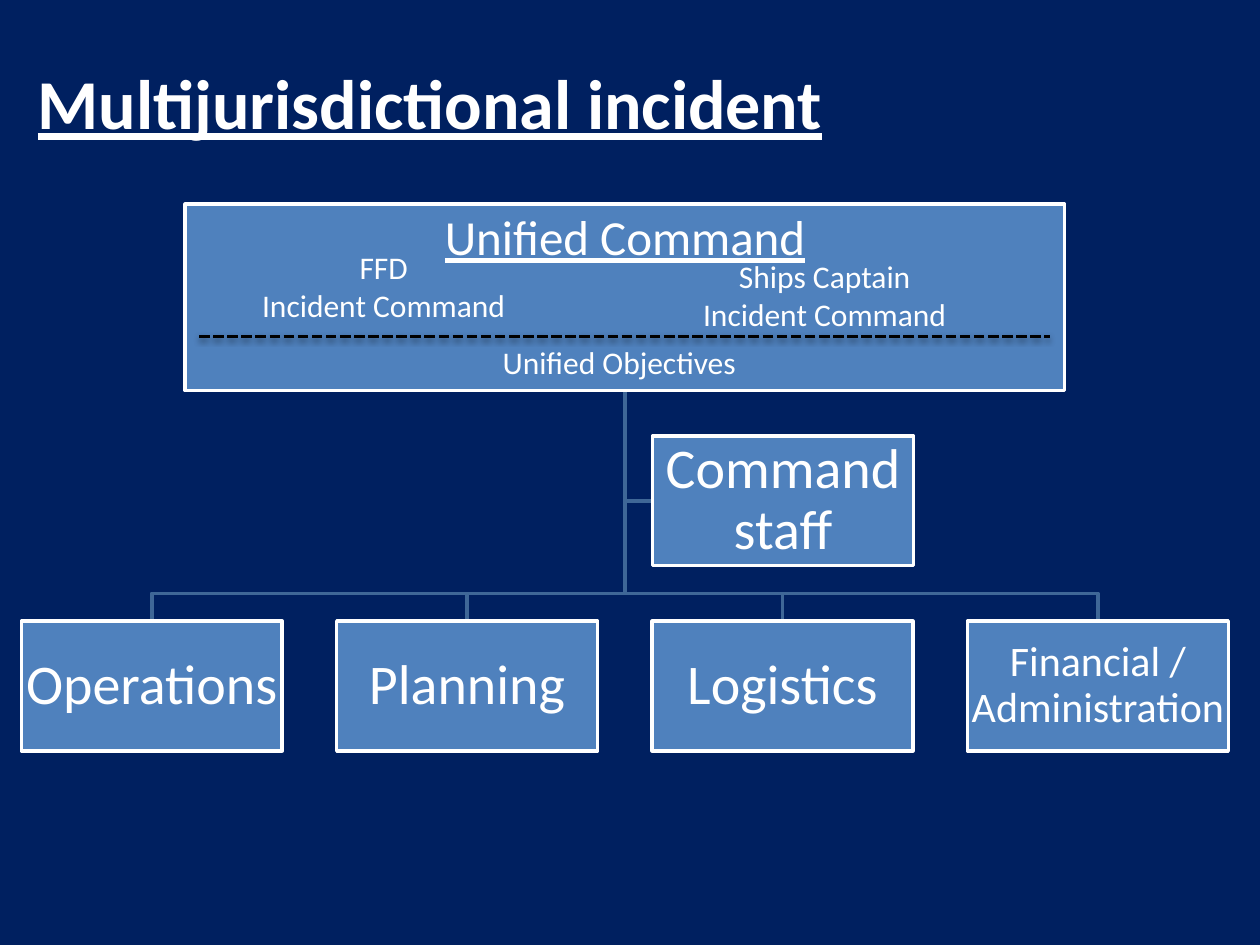
from lxml import etree
from pptx import Presentation
from pptx.dml.color import RGBColor
from pptx.enum.dml import MSO_LINE
from pptx.enum.shapes import MSO_CONNECTOR, MSO_SHAPE
from pptx.enum.text import MSO_ANCHOR, MSO_AUTO_SIZE, PP_ALIGN
from pptx.oxml import parse_xml
from pptx.util import Inches, Pt

RECTANGLE = MSO_SHAPE.RECTANGLE
STRAIGHT = MSO_CONNECTOR.STRAIGHT
DASH = MSO_LINE.SQUARE_DOT
TOP, MIDDLE = MSO_ANCHOR.TOP, MSO_ANCHOR.MIDDLE
LEFT, CENTER = PP_ALIGN.LEFT, PP_ALIGN.CENTER
NO_AUTOFIT = MSO_AUTO_SIZE.NONE
TITLE_ONLY = 5

# Content
TITLE = "Multijurisdictional incident"
COMMAND = "Unified Command"
STAFF = "Command staff"
SECTIONS = [("Operations", 32), ("Planning", 32), ("Logistics", 32),
            ("Financial / Administration", 24)]
COMMAND_NOTES = [
    (["FFD", "Incident Command"], (1.92, 1.92, 2.25, 0.71)),
    (["Ships Captain", "Incident Command"], (5.42, 1.99, 2.25, 0.71)),
    (["Unified Objectives"], (2.58, 2.67, 4.67, 0.4)),
]
COLORS = {"background": "002060", "box": "4F81BD", "text": "FFFFFF",
          "branch": "3F6797", "divider": "000000"}

# Layout in inches
COMMAND_BOX = (1.47, 1.62, 6.98, 1.48)
BOX_WIDTH, BOX_HEIGHT = 2.07, 1.03
SECTION_LEFT, SECTION_TOP, SECTION_STEP = 0.17, 4.93, 2.503
STAFF_LEFT, STAFF_TOP = 5.18, 3.46
TRUNK_X, TRUNK_TOP, BUS_Y = 4.96, 3.1, 4.71
DIVIDER_LEFT, DIVIDER_RIGHT, DIVIDER_Y = 1.58, 8.33, 2.67

SHADOW = (
    '<a:effectLst xmlns:a="http://schemas.openxmlformats.org/drawingml/2006/main">'
    '<a:outerShdw blurRad="40000" dist="20000" dir="5400000" rotWithShape="0">'
    '<a:srgbClr val="000000"><a:alpha val="38000"/></a:srgbClr>'
    '</a:outerShdw></a:effectLst>'
)


def color(name):
    return RGBColor.from_string(COLORS[name])


def write_text(shape, lines, size, align=CENTER, anchor=TOP, inset=None,
               spacing=None, bold=False, underline=False, wrap=True):
    frame = shape.text_frame
    frame.word_wrap = wrap
    frame.auto_size = NO_AUTOFIT
    frame.vertical_anchor = anchor
    if inset is not None:
        frame.margin_left = frame.margin_right = Inches(inset)
        frame.margin_top = frame.margin_bottom = Inches(inset)
    for index, line in enumerate(lines):
        paragraph = frame.add_paragraph() if index else frame.paragraphs[0]
        paragraph.alignment = align
        if spacing:
            paragraph.line_spacing = spacing
        run = paragraph.add_run()
        run.text = line
        font = run.font
        font.name, font.size = "Calibri", Pt(size)
        font.bold, font.underline = bold, underline
        font.color.rgb = color("text")


def add_branch(slide, points):
    (start_x, start_y), *rest = [(Inches(x), Inches(y)) for x, y in points]
    builder = slide.shapes.build_freeform(start_x, start_y)
    builder.add_line_segments(rest, close=False)
    branch = builder.convert_to_shape()
    branch.shadow.inherit = False
    branch.fill.background()
    branch.line.color.rgb = color("branch")
    branch.line.width = Pt(2)


def add_box(slide, bounds, text, size, **text_format):
    box = slide.shapes.add_shape(RECTANGLE, *map(Inches, bounds))
    box.shadow.inherit = False
    box.fill.solid()
    box.fill.fore_color.rgb = color("box")
    box.line.color.rgb = color("text")
    box.line.width = Pt(2)
    write_text(box, [text], size, inset=0.02, **text_format)


def add_divider(slide):
    y = Inches(DIVIDER_Y)
    divider = slide.shapes.add_connector(
        STRAIGHT, Inches(DIVIDER_LEFT), y, Inches(DIVIDER_RIGHT), y)
    divider.line.color.rgb = color("divider")
    divider.line.width = Pt(2)
    divider.line.dash_style = DASH
    divider._element.spPr.append(parse_xml(SHADOW))


def main():
    presentation = Presentation()
    presentation.slide_width, presentation.slide_height = Inches(10), Inches(7.5)
    slide = presentation.slides.add_slide(presentation.slide_layouts[TITLE_ONLY])
    slide.background.fill.solid()
    slide.background.fill.fore_color.rgb = color("background")

    # Title
    title = slide.shapes.title
    title.left, title.top = Inches(0.2), Inches(0.42)
    title.width, title.height = Inches(6.51), Inches(0.77)
    write_text(title, [TITLE], 40, align=LEFT, bold=True, underline=True, wrap=False)

    # Branches from the command box
    section_lefts = [SECTION_LEFT + i * SECTION_STEP for i in range(len(SECTIONS))]
    staff_middle = STAFF_TOP + BOX_HEIGHT / 2
    add_branch(slide, [(TRUNK_X, TRUNK_TOP), (TRUNK_X, staff_middle),
                       (STAFF_LEFT, staff_middle)])
    for left in section_lefts:
        center = left + BOX_WIDTH / 2
        add_branch(slide, [(TRUNK_X, TRUNK_TOP), (TRUNK_X, BUS_Y),
                           (center, BUS_Y), (center, SECTION_TOP)])

    # Organization boxes
    add_box(slide, COMMAND_BOX, COMMAND, 28, underline=True)
    boxes = [(STAFF, 32, STAFF_LEFT, STAFF_TOP)]
    boxes += [(text, size, left, SECTION_TOP)
              for (text, size), left in zip(SECTIONS, section_lefts)]
    for text, size, left, top in boxes:
        add_box(slide, (left, top, BOX_WIDTH, BOX_HEIGHT), text, size,
                anchor=MIDDLE, spacing=0.9)

    # Details inside the command box
    add_divider(slide)
    for lines, bounds in COMMAND_NOTES:
        note = slide.shapes.add_textbox(*map(Inches, bounds))
        write_text(note, lines, 18)

    presentation.save("out.pptx")


if __name__ == "__main__":
    main()
